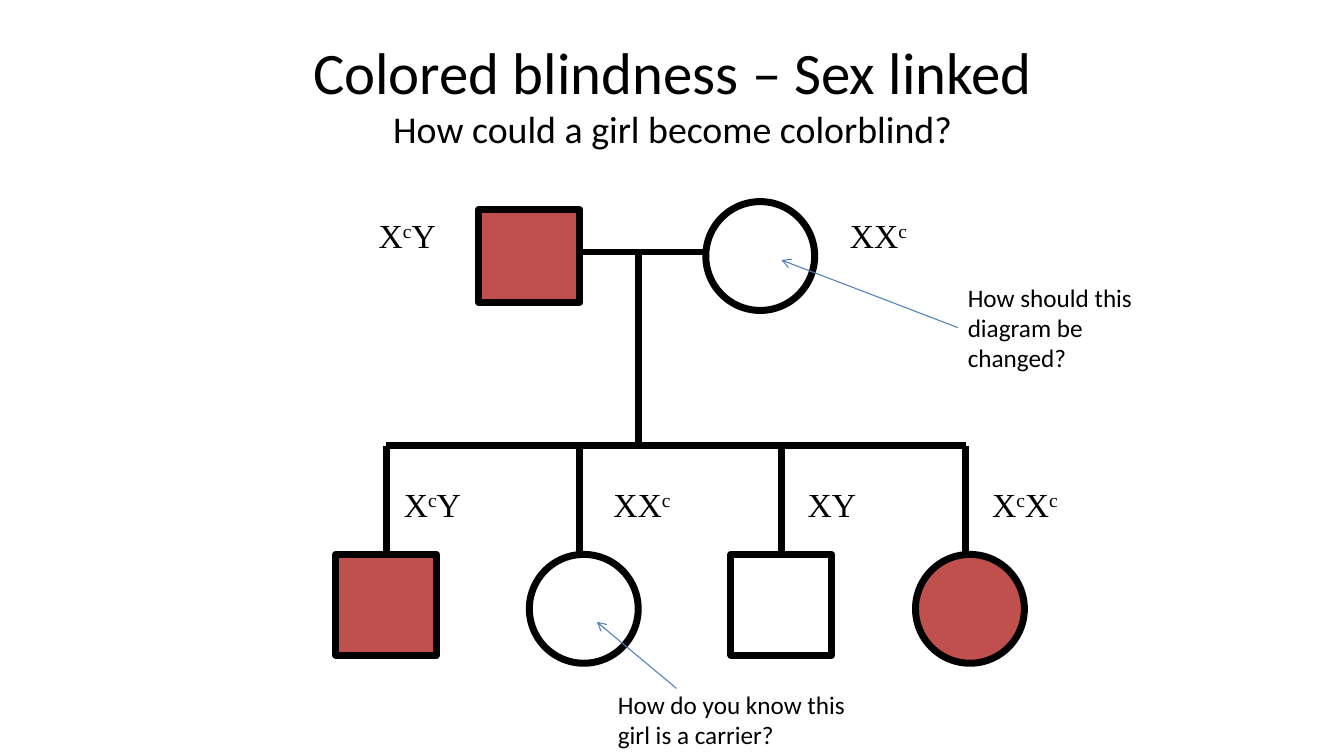
from dataclasses import dataclass
from itertools import groupby

from lxml import etree
from pptx import Presentation
from pptx import util as u
from pptx.dml import color
from pptx.enum import shapes, text
from pptx.oxml import ns

BLACK, RED, BLUE = "000000", "C0504D", "4B7EBC"
BOX, ROUND = shapes.MSO_SHAPE.RECTANGLE, shapes.MSO_SHAPE.OVAL
LEFT, RIGHT, CENTER = text.PP_ALIGN.LEFT, text.PP_ALIGN.RIGHT, text.PP_ALIGN.CENTER
MATE_Y, SIB_Y, KID_Y = 2.5, 4.42, 5.5


@dataclass
class Person:
    kind: shapes.MSO_SHAPE
    x: float
    y: float
    w: float
    h: float
    fill: str = ""


@dataclass
class Line:
    x1: float
    y1: float
    x2: float
    y2: float
    hue: str = BLACK
    width: float = 5
    arrow: bool = False


@dataclass
class Gene:
    code: str
    x: float
    y: float
    w: float
    align: text.PP_ALIGN = RIGHT


@dataclass
class Note:
    words: str
    x: float
    y: float
    w: float
    h: float


def paint(part, code: str) -> None:
    part.rgb = color.RGBColor.from_string(code)


def add_run(para, words: str, size: float, face: str, raised: bool = False) -> None:
    run = para.add_run()
    run.text = words
    run.font.size = u.Pt(size)
    run.font.name = face
    paint(run.font.color, BLACK)
    if raised:
        run.font._element.set("baseline", "30000")


def draw_title(slide, head: str, sub: str) -> None:
    title = slide.shapes.title
    title.left, title.top = u.Inches(0.67), u.Inches(0.3)
    title.width, title.height = u.Inches(12), u.Inches(1.25)
    frame = title.text_frame
    frame.auto_size = text.MSO_AUTO_SIZE.NONE
    frame.vertical_anchor = text.MSO_ANCHOR.MIDDLE
    para = frame.paragraphs[0]
    para.alignment = CENTER
    add_run(para, head, 42, "Calibri")
    para.add_line_break()
    add_run(para, sub, 27, "Calibri")


def draw_person(slide, one: Person) -> None:
    shape = slide.shapes.add_shape(
        one.kind, u.Inches(one.x), u.Inches(one.y), u.Inches(one.w), u.Inches(one.h))
    shape.shadow.inherit = False
    if one.fill:
        shape.fill.solid()
        paint(shape.fill.fore_color, one.fill)
    else:
        shape.fill.background()
    paint(shape.line.color, BLACK)
    shape.line.width = u.Pt(5)


def draw_line(slide, one: Line) -> None:
    link = slide.shapes.add_connector(
        shapes.MSO_CONNECTOR.STRAIGHT,
        u.Inches(one.x1), u.Inches(one.y1), u.Inches(one.x2), u.Inches(one.y2))
    paint(link.line.color, one.hue)
    link.line.width = u.Pt(one.width)
    if one.arrow:
        etree.SubElement(link.line._get_or_add_ln(), ns.qn("a:tailEnd"), type="arrow")
    etree.SubElement(link._element.spPr, ns.qn("a:effectLst"))


def add_box(slide, x: float, y: float, w: float, h: float, align: text.PP_ALIGN):
    box = slide.shapes.add_textbox(u.Inches(x), u.Inches(y), u.Inches(w), u.Inches(h))
    box.text_frame.word_wrap = True
    para = box.text_frame.paragraphs[0]
    para.alignment = align
    return para


def draw_gene(slide, one: Gene) -> None:
    para = add_box(slide, one.x, one.y, one.w, 0.5, one.align)
    for raised, marks in groupby(one.code, str.islower):
        add_run(para, "".join(marks), 24, "Times New Roman", raised)


def draw_note(slide, one: Note) -> None:
    para = add_box(slide, one.x, one.y, one.w, one.h, LEFT)
    add_run(para, one.words, 18, "Calibri")


PEOPLE = [
    Person(BOX, 4.75, 2.08, 1, 0.92, RED),
    Person(ROUND, 7, 2, 1.08, 1.08),
    Person(BOX, 3.33, KID_Y, 1, 1, RED),
    Person(ROUND, 5.25, KID_Y, 1.08, 1.08),
    Person(BOX, 7.25, KID_Y, 1, 1),
    Person(ROUND, 9.08, KID_Y, 1.08, 1.08, RED),
]
DROPS = [3.83, 5.75, 7.75, 9.58]
LINES = [
    Line(5.75, MATE_Y, 7, MATE_Y),
    Line(6.33, MATE_Y, 6.33, SIB_Y),
    Line(DROPS[0], SIB_Y, DROPS[-1], SIB_Y),
    *(Line(x, SIB_Y, x, KID_Y) for x in DROPS),
    Line(9.5, 3.25, 7.75, 2.58, BLUE, 0.75, True),
    Line(6.71, 6.83, 5.92, 6.17, BLUE, 0.75, True),
]
GENES = [
    Gene("XcY", 3, 2.08, 1.42),
    Gene("XXc", 8.33, 2.08, 1.75, LEFT),
    Gene("XcY", 3.5, 4.75, 1.17),
    Gene("XXc", 5.58, 4.75, 1.17),
    Gene("XY", 7.42, 4.75, 1.17),
    Gene("XcXc", 9.42, 4.75, 1.17),
]
NOTES = [
    Note("How should this diagram be changed?", 9.5, 2.75, 1.88, 1.01),
    Note("How do you know this girl is a carrier?", 6.03, 6.79, 2.78, 0.71),
]


def main() -> None:
    deck = Presentation()
    deck.slide_width, deck.slide_height = u.Inches(13.33), u.Inches(7.5)
    slide = deck.slides.add_slide(deck.slide_layouts[5])
    draw_title(slide, "Colored blindness – Sex linked", "How could a girl become colorblind?")
    for draw, items in ((draw_person, PEOPLE), (draw_line, LINES),
                        (draw_gene, GENES), (draw_note, NOTES)):
        for one in items:
            draw(slide, one)
    deck.save("out.pptx")


if __name__ == "__main__":
    main()
